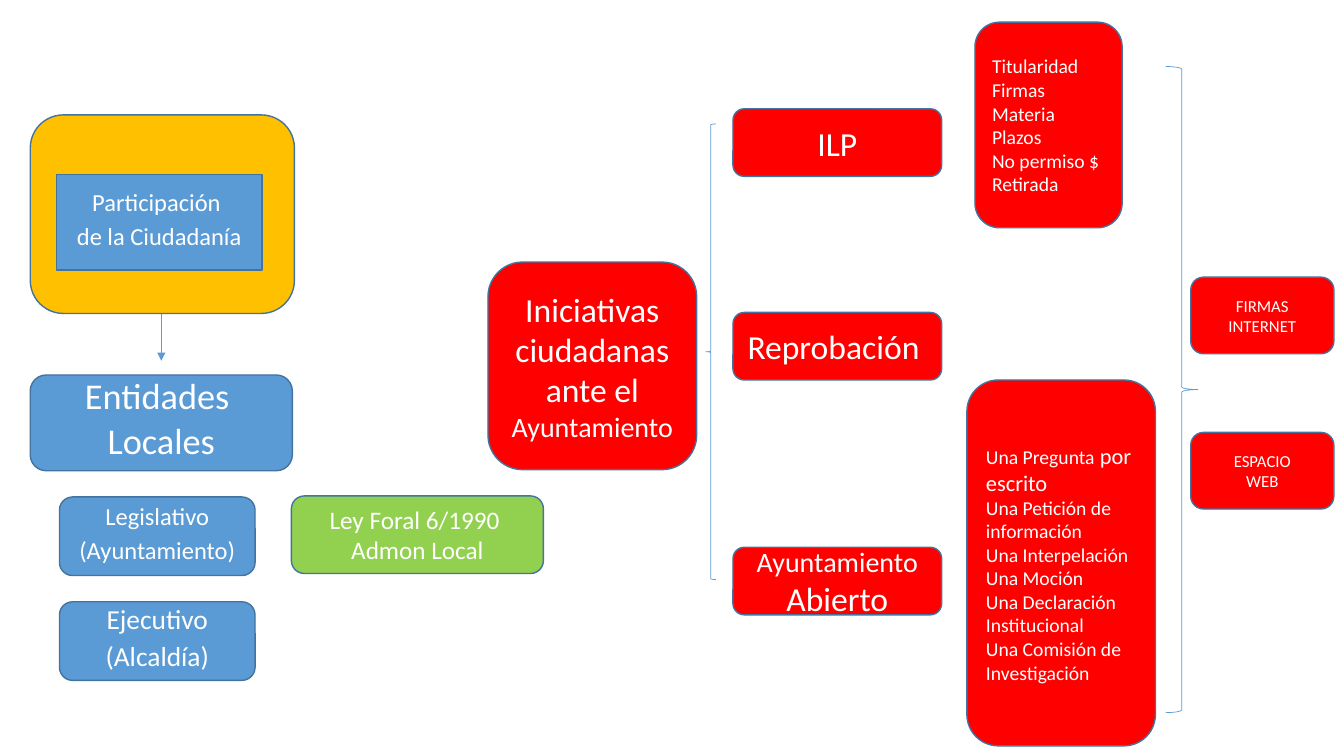
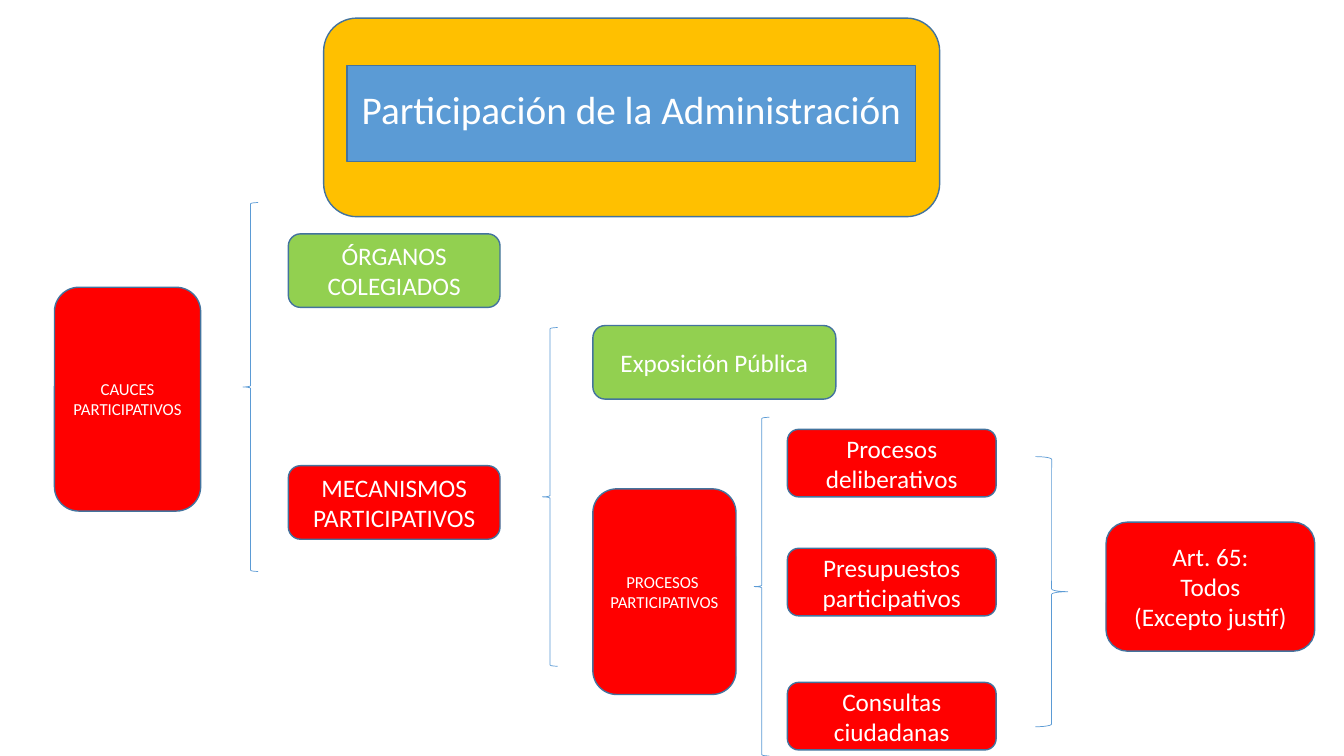
from lxml import etree
from pptx import Presentation
from pptx.dml.color import RGBColor
from pptx.enum.shapes import MSO_CONNECTOR, MSO_SHAPE
from pptx.enum.text import MSO_ANCHOR, MSO_AUTO_SIZE, PP_ALIGN
from pptx.oxml.ns import qn
from pptx.util import Inches, Pt

ROUNDED = MSO_SHAPE.FLOWCHART_ALTERNATE_PROCESS
LEFT_BRACE, RIGHT_BRACE = MSO_SHAPE.LEFT_BRACE, MSO_SHAPE.RIGHT_BRACE
STRAIGHT = MSO_CONNECTOR.STRAIGHT
MIDDLE, NO_FIT = MSO_ANCHOR.MIDDLE, MSO_AUTO_SIZE.NONE
LEFT, CENTER = PP_ALIGN.LEFT, PP_ALIGN.CENTER

FONT = "Calibri"
BLUE = RGBColor(0x5B, 0x9B, 0xD5)
OUTLINE = RGBColor(0x43, 0x73, 0x9E)
RED = RGBColor(0xFF, 0x00, 0x00)
GREEN = RGBColor(0x92, 0xD0, 0x50)
GOLD = RGBColor(0xFF, 0xC0, 0x00)
WHITE = RGBColor(0xFF, 0xFF, 0xFF)

# Shared measures, in inches
SLIDE_SIZE = (13.33, 7.5)
FRAME_HEIGHT, TITLE_HEIGHT = 1.97, 0.95
ITEM_SIZE = (2.07, 0.67)
ORGAN_SIZE = (1.94, 0.78)
CHANNEL_SIZE = (2.1, 0.73)
SUPPORT_SIZE = (1.42, 0.76)
BRACE_WIDTH, WIDE_BRACE_WIDTH = 0.15, 0.32


def inches(*lengths):
    return [Inches(length) for length in lengths]


def style_outline(shape, color=OUTLINE, width=1):
    shape.line.color.rgb = color
    shape.line.width = Pt(width)


def write(shape, paragraphs, size, align=CENTER, spacing=None):
    """Fill a shape with paragraphs: each a string or a list of (text, size)."""
    frame = shape.text_frame
    frame.word_wrap = True
    frame.auto_size = NO_FIT
    frame.vertical_anchor = MIDDLE
    for index, content in enumerate(paragraphs):
        paragraph = frame.add_paragraph() if index else frame.paragraphs[0]
        paragraph.alignment = align
        if spacing:
            paragraph.line_spacing = spacing
            paragraph.space_before = Pt(10)
        parts = [(content, size)] if isinstance(content, str) else content
        for text, part_size in parts:
            run = paragraph.add_run()
            run.text = text
            run.font.size = Pt(part_size)
            run.font.name = FONT
            run.font.color.rgb = WHITE


def add_box(slide, at, fill, paragraphs=(), size=18, align=CENTER, spacing=None):
    box = slide.shapes.add_shape(ROUNDED, *inches(*at))
    box.shadow.inherit = False
    box.fill.solid()
    box.fill.fore_color.rgb = fill
    style_outline(box)
    write(box, paragraphs, size, align, spacing)


def add_brace(slide, kind, at):
    brace = slide.shapes.add_shape(kind, *inches(*at))
    brace.shadow.inherit = False
    brace.fill.background()
    style_outline(brace, BLUE, 0.5)


def add_arrow(slide, start, end):
    arrow = slide.shapes.add_connector(STRAIGHT, *inches(*start, *end))
    style_outline(arrow, BLUE, 0.5)
    etree.SubElement(arrow.line._get_or_add_ln(), qn("a:tailEnd"), type="triangle")
    etree.SubElement(arrow._element.spPr, qn("a:effectLst"))


def add_title(slide, frame_at, title_at, paragraphs, size, spacing):
    """Gold frame with the slide title in a rounded blue panel on top."""
    add_box(slide, (*frame_at, FRAME_HEIGHT), GOLD)
    title = slide.shapes.title
    title.left, title.top, title.width, title.height = inches(*title_at, TITLE_HEIGHT)
    outline = etree.SubElement(title._element.spPr, qn("a:prstGeom"),
                               prst="flowChartAlternateProcess")
    etree.SubElement(outline, qn("a:avLst"))
    title.fill.solid()
    title.fill.fore_color.rgb = BLUE
    style_outline(title)
    write(title, paragraphs, size, spacing=spacing)
    slide.shapes._spTree.append(title._element)  # bring in front of the frame


def build_citizens(slide):
    # Local bodies and their law
    add_arrow(slide, (1.6, 2.8), (1.6, 3.58))
    add_box(slide, (0.3, 3.72, 2.6, 0.95), BLUE, ["Entidades ", "Locales"], 25.9, spacing=0.7)
    for top, organ, size in ((4.93, ["Legislativo", "(Ayuntamiento)"], 17.5),
                             (5.97, ["Ejecutivo", "(Alcaldía)"], 19.6)):
        add_box(slide, (0.59, top, *ORGAN_SIZE), BLUE, organ, size, spacing=0.7)
    add_box(slide, (2.89, 4.92, 2.5, 0.77), GREEN, ["Ley Foral 6/1990 ", "Admon Local"])

    # Initiatives and their three kinds
    add_box(slide, (4.84, 2.6, 2.07, 2.06), RED,
            [[("Iniciativas ciudadanas ante el ", 24), ("Ayuntamiento", 20)]])
    add_brace(slide, LEFT_BRACE, (7, 1.23, 0.1, 4.52))
    for top, initiative in ((1.08, ["ILP"]), (3.1, ["Reprobación "]),
                            (5.43, [[("Ayuntamiento", 20)], "Abierto"])):
        add_box(slide, (7.27, top, *ITEM_SIZE), RED, initiative, 24)

    # Requirements and open council options
    add_box(slide, (9.67, 0.22, 1.46, 2.04), RED,
            ["Titularidad", "Firmas", "Materia", "Plazos", "No permiso $", "Retirada"],
            14, LEFT)
    add_box(slide, (9.59, 3.77, 1.87, 3.63), RED,
            [[("Una Pregunta", 14), (" por escrito", 16)],
             "Una Petición de información", "Una Interpelación", "Una Moción",
             "Una Declaración Institucional", "Una Comisión de Investigación"],
            14, LEFT)

    # Online support
    add_brace(slide, RIGHT_BRACE, (11.56, 0.66, WIDE_BRACE_WIDTH, 6.41))
    for top, support in ((2.75, ["FIRMAS", "INTERNET"]), (4.29, ["ESPACIO", "WEB"])):
        add_box(slide, (11.81, top, *SUPPORT_SIZE), RED, support, 12)

    add_title(slide, (0.3, 1.14, 2.62), (0.56, 1.73, 2.04),
              ["Participación ", "de la Ciudadanía"], 17.5, 0.7)


def build_administration(slide):
    add_title(slide, (3.21, 0.18, 6.11), (3.44, 0.65, 5.64),
              ["Participación de la Administración"], 28, 0.8)

    # Channels
    add_box(slide, (0.54, 2.85, 1.45, 2.22), RED, ["CAUCES", "PARTICIPATIVOS"], 12)
    for top, fill, channel in ((2.32, GREEN, ["ÓRGANOS", "COLEGIADOS"]),
                               (4.62, RED, ["MECANISMOS", "PARTICIPATIVOS"])):
        add_box(slide, (2.86, top, *CHANNEL_SIZE), fill, channel)

    # Mechanisms
    add_box(slide, (5.88, 3.23, 2.41, 0.73), GREEN, ["Exposición Pública"])
    add_box(slide, (5.88, 4.85, 1.42, 2.04), RED, ["PROCESOS ", "PARTICIPATIVOS"], 12)

    # Processes and the rule that covers them
    for top, process in ((4.26, "Procesos deliberativos"),
                         (5.44, "Presupuestos participativos"),
                         (6.77, "Consultas ciudadanas")):
        add_box(slide, (7.81, top, *ITEM_SIZE), RED, [process])
    add_box(slide, (10.97, 5.18, 2.07, 1.28), RED, ["Art. 65:", "Todos", "(Excepto justif)"])

    # Braces between the levels
    for left, top, height in ((2.41, 2.01, 3.66), (5.38, 3.25, 3.36), (7.48, 4.14, 3.36)):
        add_brace(slide, LEFT_BRACE, (left, top, BRACE_WIDTH, height))
    add_brace(slide, RIGHT_BRACE, (10.27, 4.53, WIDE_BRACE_WIDTH, 2.68))


def main():
    deck = Presentation()
    deck.slide_width, deck.slide_height = inches(*SLIDE_SIZE)
    title_only = deck.slide_layouts[5]
    for build in (build_citizens, build_administration):
        build(deck.slides.add_slide(title_only))
    deck.save("out.pptx")


if __name__ == "__main__":
    main()
